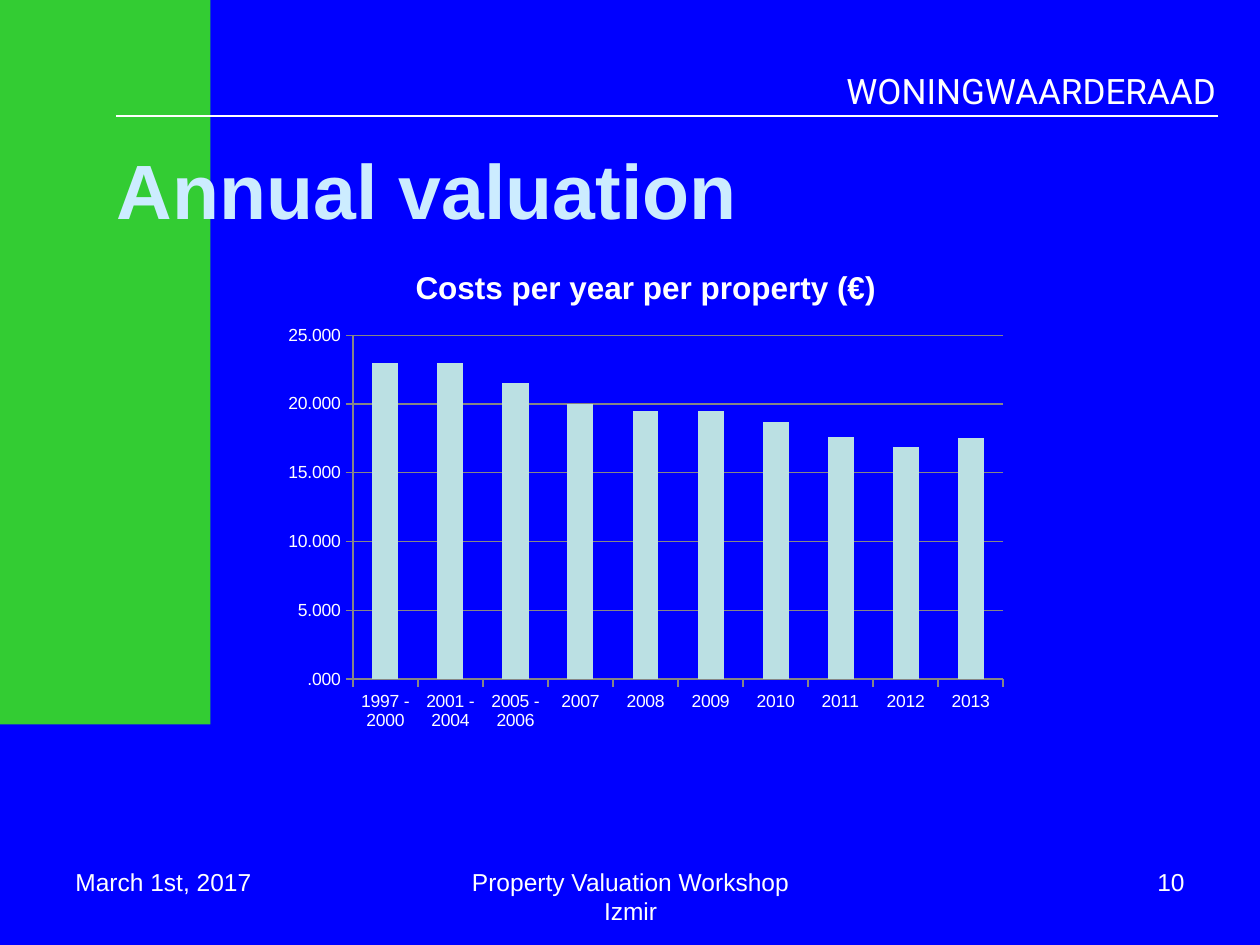
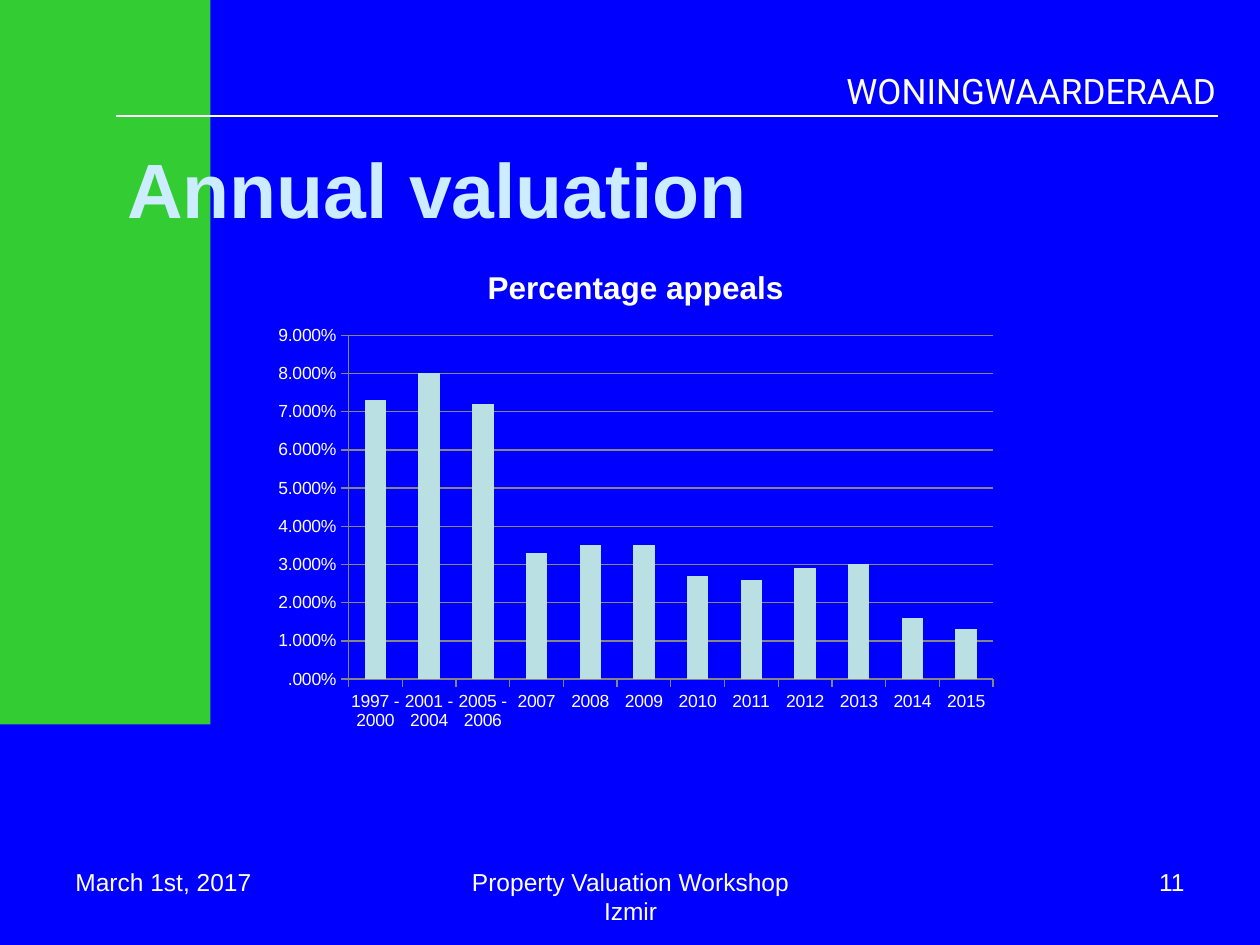
import pptx
import pptx.chart.data
import pptx.dml.color
import pptx.enum.chart
import pptx.enum.shapes
import pptx.enum.text
import pptx.oxml
import pptx.util

Inches = pptx.util.Inches
Pt = pptx.util.Pt
ALIGN = pptx.enum.text.PP_ALIGN

BLUE, GREEN, WHITE = "0000FF", "33CC33", "FFFFFF"
TITLE_COLOUR, BAR_COLOUR, GRID_COLOUR = "CCECFF", "BBE0E3", "868686"
FONT = "Arial"

ORGANISATION = "WONINGWAARDERAAD"
DATE = "March 1st, 2017"
EVENT = "Property Valuation Workshop Izmir"
FOOTER_TOP, FOOTER_HEIGHT = 6.83, 0.52
CHART_TOP, CHART_WIDTH, CHART_HEIGHT = 1.94, 5.91, 3.94

PERIODS = ["1997 - 2000", "2001 - 2004", "2005 - 2006"]
SLIDES = [
    {
        "number": 10,
        "title": "Annual valuation",
        "title_box": (0.83, 1, 10, 1),
        "chart_title": "Costs per year per property (€)",
        "chart_left": 2.17,
        "series": "Costs per year per property (€)",
        "categories": PERIODS + [str(year) for year in range(2007, 2014)],
        "values": [23, 23, 21.5, 20, 19.5, 19.5, 18.7, 17.6, 16.9, 17.5],
        "format": "#.000",
        "maximum": 25,
        "step": 5,
    },
    {
        "number": 11,
        "title": "Annual valuation",
        "title_box": (0.91, 0.99, 9.25, 1),
        "chart_title": "Percentage appeals",
        "chart_left": 2.09,
        "series": "Series 1",
        "categories": PERIODS + [str(year) for year in range(2007, 2016)],
        "values": [0.073, 0.08, 0.072, 0.033, 0.035, 0.035,
                   0.027, 0.026, 0.029, 0.03, 0.016, 0.013],
        "format": "#.#00%",
        "maximum": 0.09,
        "step": 0.01,
    },
]


def colour(hex_string):
    return pptx.dml.color.RGBColor.from_string(hex_string)


def paint(fill, hex_string):
    fill.solid()
    fill.fore_color.rgb = colour(hex_string)


def set_font(font, size, hex_string=WHITE, name=FONT, bold=False):
    font.size = Pt(size)
    font.name = name
    font.bold = bold
    font.color.rgb = colour(hex_string)


def add_text(slide, text, box, align=ALIGN.LEFT, middle=False, **font_format):
    shape = slide.shapes.add_textbox(*map(Inches, box))
    frame = shape.text_frame
    frame.word_wrap = True
    if middle:
        frame.vertical_anchor = pptx.enum.text.MSO_ANCHOR.MIDDLE
    paragraph = frame.paragraphs[0]
    paragraph.alignment = align
    run = paragraph.add_run()
    run.text = text
    set_font(run.font, **font_format)


def add_frame(slide):
    """Draw the background, side band, header and rule common to all slides."""
    paint(slide.background.fill, BLUE)
    band = slide.shapes.add_shape(
        pptx.enum.shapes.MSO_SHAPE.RECTANGLE, 0, 0, Inches(1.67), Inches(5.75))
    band.shadow.inherit = False
    paint(band.fill, GREEN)
    band.line.fill.background()

    rule = slide.shapes.add_connector(
        pptx.enum.shapes.MSO_CONNECTOR.STRAIGHT,
        Inches(9.67), Inches(0.92), Inches(0.92), Inches(0.92))
    rule.line.color.rgb = colour(WHITE)
    rule.line.width = Pt(1)
    properties = rule.element.spPr
    properties.append(properties.makeelement(pptx.oxml.ns.qn("a:effectLst"), {}))

    add_text(slide, ORGANISATION, (1.42, 0.5, 8.33, 1.58),
             align=ALIGN.RIGHT, size=20, name="Roboto")


def add_footer(slide, number):
    parts = [
        (DATE, 0.5, 2.33, ALIGN.LEFT),
        (EVENT, 3.42, 3.17, ALIGN.CENTER),
        (str(number), 7.17, 2.33, ALIGN.RIGHT),
    ]
    for text, left, width, align in parts:
        add_text(slide, text, (left, FOOTER_TOP, width, FOOTER_HEIGHT),
                 align=align, size=14)


def style_line(line):
    line.color.rgb = colour(GRID_COLOUR)
    line.width = Pt(0.75)


def add_column_chart(slide, content):
    data = pptx.chart.data.CategoryChartData(number_format=content["format"])
    data.categories = content["categories"]
    data.add_series(content["series"], content["values"])
    box = (content["chart_left"], CHART_TOP, CHART_WIDTH, CHART_HEIGHT)
    chart = slide.shapes.add_chart(
        pptx.enum.chart.XL_CHART_TYPE.COLUMN_CLUSTERED,
        *map(Inches, box), data).chart
    set_font(chart.font, 10)
    chart.has_legend = False

    chart.has_title = True
    chart.chart_title.include_in_layout = False
    title = chart.chart_title.text_frame
    title.text = content["chart_title"]
    set_font(title.paragraphs[0].runs[0].font, 18, bold=True)

    plot = chart.plots[0]
    plot.gap_width = 150
    plot.vary_by_categories = False
    paint(plot.series[0].format.fill, BAR_COLOUR)

    for axis in (chart.category_axis, chart.value_axis):
        axis.major_tick_mark = pptx.enum.chart.XL_TICK_MARK.OUTSIDE
        style_line(axis.format.line)
    axis = chart.value_axis
    axis.minimum_scale = 0
    axis.maximum_scale = content["maximum"]
    axis.major_unit = content["step"]
    axis.has_major_gridlines = True
    style_line(axis.major_gridlines.format.line)
    axis.tick_labels.number_format = content["format"]
    axis.tick_labels.number_format_is_linked = False


def main():
    presentation = pptx.Presentation()
    presentation.slide_width = Inches(10)
    presentation.slide_height = Inches(7.5)
    for content in SLIDES:
        slide = presentation.slides.add_slide(presentation.slide_layouts[6])
        add_frame(slide)
        add_text(slide, content["title"], content["title_box"], middle=True,
                 size=44, hex_string=TITLE_COLOUR, bold=True)
        add_column_chart(slide, content)
        add_footer(slide, content["number"])
    presentation.save("out.pptx")


if __name__ == "__main__":
    main()
